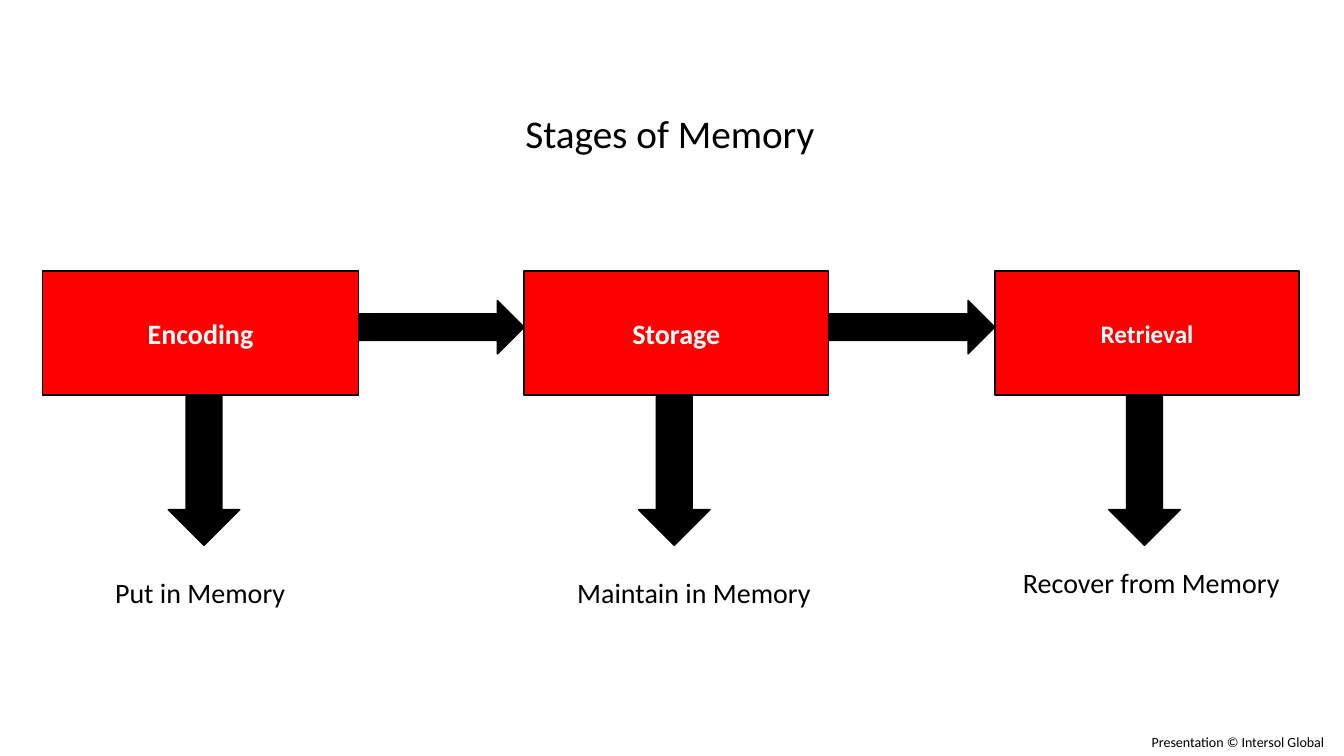
from pptx import Presentation
from pptx.dml.color import RGBColor
from pptx.enum.shapes import MSO_SHAPE as SHAPE
from pptx.enum.text import MSO_ANCHOR as ANCHOR, PP_ALIGN as ALIGN
from pptx.util import Pt

RED = RGBColor(0xFF, 0x00, 0x00)
BLACK = RGBColor(0x00, 0x00, 0x00)
WHITE = RGBColor(0xFF, 0xFF, 0xFF)

STAGE_TOP, STAGE_H = 193.7, 88.6
STAGE_STEP = 335.9  # distance between the stages' down arrows
DOWN_LEFT, DOWN_W, DOWN_H = 120.2, 51.1, 107.3
NEXT_DROP, NEXT_H = 20.9, 38.2

# name, name size, box left, box width, caption, caption box, caption alignment
STAGES = [
    ("Encoding", 20, 30.2, 226.1,
     "Put in Memory", (38.2, 407.5, 209.5, 31.7), ALIGN.CENTER),
    ("Storage", 20, 374.4, 217.4,
     "Maintain in Memory", (367.9, 407.5, 255.6, 31.7), ALIGN.CENTER),
    ("Retrieval", 18, 710.6, 217.4,
     "Recover from Memory", (723.6, 400.3, 236.2, 31.7), ALIGN.LEFT),
]


def write(s, text, size=20, color=BLACK, bold=False, align=ALIGN.CENTER,
          anchor=ANCHOR.TOP, wrap=True):
    tf = s.text_frame
    tf.word_wrap = wrap
    tf.vertical_anchor = anchor
    p = tf.paragraphs[0]
    p.alignment = align
    r = p.add_run()
    r.text = text
    r.font.name = "Calibri"
    r.font.size = Pt(size)
    r.font.bold = bold
    r.font.color.rgb = color


def add_label(slide, box, text, **fmt):
    write(slide.shapes.add_textbox(*map(Pt, box)), text, **fmt)


def add_block(slide, kind, box, fill):
    s = slide.shapes.add_shape(kind, *map(Pt, box))
    s.shadow.inherit = False
    s.fill.solid()
    s.fill.fore_color.rgb = fill
    s.line.color.rgb = BLACK
    s.line.width = Pt(1)
    return s


def add_stage(slide, box, name, size, down_left):
    left, top, width, height = box
    s = add_block(slide, SHAPE.RECTANGLE, box, RED)
    write(s, name, size=size, color=WHITE, bold=True,
          anchor=ANCHOR.MIDDLE, wrap=False)
    # Arrow down to the caption
    add_block(slide, SHAPE.DOWN_ARROW,
              (down_left, top + height, DOWN_W, DOWN_H), BLACK)


def add_next_arrow(slide, start, end):
    add_block(slide, SHAPE.RIGHT_ARROW,
              (start, STAGE_TOP + NEXT_DROP, end - start, NEXT_H), BLACK)


def build_slide(prs):
    slide = prs.slides.add_slide(prs.slide_layouts[6])

    # Title
    add_label(slide, (277.9, 74.2, 401, 41), "Stages of Memory", size=28)

    # Stages with their captions
    for i, (name, size, left, width, caption, box, align) in enumerate(STAGES):
        add_stage(slide, (left, STAGE_TOP, width, STAGE_H), name, size,
                  DOWN_LEFT + i * STAGE_STEP)
        add_label(slide, box, caption, align=align)

    # Arrows from each stage to the next
    for stage, following in zip(STAGES, STAGES[1:]):
        add_next_arrow(slide, stage[2] + stage[3], following[2])

    # Copyright line
    add_label(slide, (808.6, 520.6, 151.2, 19.4),
              "Presentation © Intersol Global", size=10)


def main():
    prs = Presentation()
    prs.slide_width, prs.slide_height = Pt(960), Pt(540)
    build_slide(prs)
    prs.save("out.pptx")


if __name__ == "__main__":
    main()
